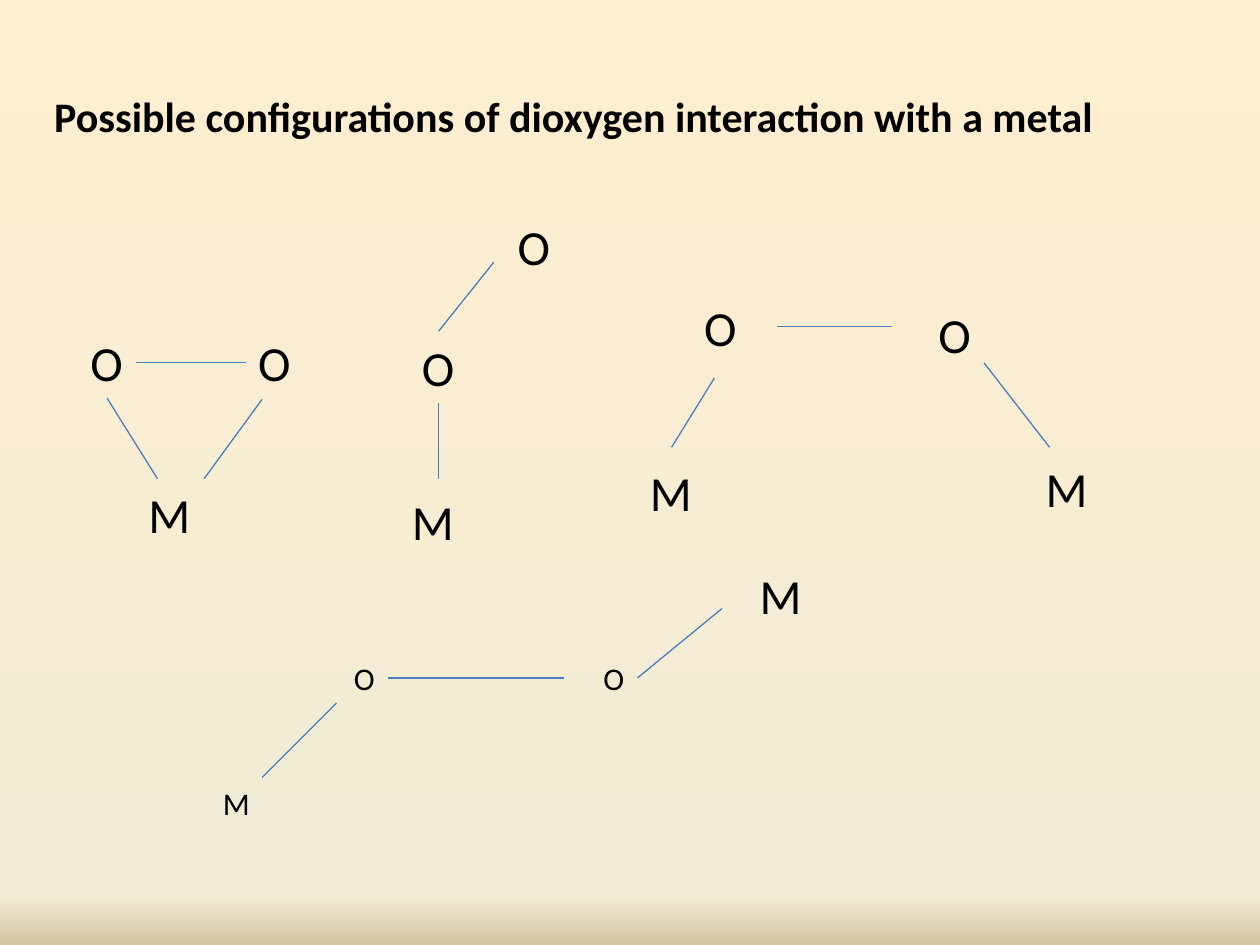
from typing import NamedTuple

from lxml.etree import SubElement
from pptx import Presentation
from pptx.dml.color import RGBColor
from pptx.enum.shapes import MSO_CONNECTOR
from pptx.enum.text import MSO_ANCHOR, MSO_AUTO_SIZE, PP_ALIGN
from pptx.oxml.ns import qn
from pptx.util import Inches, Pt

# Grid of 100 columns by 75 rows
COLS, ROWS = 100, 75
WIDE, HIGH = Inches(10), Inches(7.5)
FONT = "Calibri"
COLORS = {"text": "000000", "bond": "4B7EBC",
          "top": "FFEFD1", "low": "F0EBD5", "base": "D1C39F"}
SIZES = {("M", 28): (5.4, 5.7), ("O", 28): (4.6, 5.7),
         ("M", 18): (4.2, 4), ("O", 18): (3.7, 4)}
LEFT, BOTTOM, RIGHT, TOP = 1, 2, 3, 0


class Atom(NamedTuple):
    name: str
    sign: str
    col: float
    row: float
    size: int = 28


class Spot(NamedTuple):
    col: float
    row: float


class Joint(NamedTuple):
    name: str
    side: int


class Bond(NamedTuple):
    start: Spot | Joint
    end: Spot | Joint


ATOMS = [
    # Ring
    Atom("ring M", "M", 10.8, 38),
    Atom("ring O left", "O", 6.2, 25.9),
    Atom("ring O right", "O", 19.5, 25.9),
    # Bent, end on
    Atom("bent M", "M", 31.7, 38.5),
    Atom("bent O low", "O", 32.5, 26.3),
    Atom("bent O high", "O", 40.1, 16.7),
    # Bridge, both metals below
    Atom("bridge M left", "M", 50.6, 36.2),
    Atom("bridge O left", "O", 54.9, 23.1),
    Atom("bridge O right", "O", 73.5, 23.7),
    Atom("bridge M right", "M", 82, 35.9),
    # Zigzag, metals on both sides
    Atom("zigzag M left", "M", 16.7, 61.7, 18),
    Atom("zigzag O left", "O", 27.1, 51.8, 18),
    Atom("zigzag O right", "O", 46.9, 51.8, 18),
    Atom("zigzag M right", "M", 59.3, 44.4),
]

BONDS = [
    # Ring
    Bond(Spot(16.2, 38), Spot(20.8, 31.7)),
    Bond(Joint("ring O left", RIGHT), Joint("ring O right", LEFT)),
    Bond(Joint("ring O left", BOTTOM), Spot(12.5, 38)),
    # Bent
    Bond(Joint("bent O low", BOTTOM), Spot(34.8, 38)),
    Bond(Joint("bent O low", TOP), Spot(39.2, 20.8)),
    # Bridge
    Bond(Spot(53.3, 35.5), Spot(56.7, 30)),
    Bond(Spot(61.7, 25.9), Spot(70.8, 25.9)),
    Bond(Spot(78.1, 28.8), Spot(83.3, 35.5)),
    # Zigzag
    Bond(Spot(20.8, 61.7), Spot(26.7, 55.8)),
    Bond(Joint("zigzag O left", RIGHT), Spot(44.8, 53.8)),
    Bond(Joint("zigzag O right", RIGHT), Spot(57.3, 48.3)),
]


def across(cols: float) -> int:
    return round(WIDE * cols / COLS)


def down(rows: float) -> int:
    return round(HIGH * rows / ROWS)


def style(frame, size: int, bold: bool = False) -> None:
    for run in frame.paragraphs[0].runs:
        run.font.name = FONT
        run.font.size = Pt(size)
        run.font.bold = bold
        run.font.color.rgb = RGBColor.from_string(COLORS["text"])


def paint_back(slide) -> None:
    fill = slide.background.fill
    fill.gradient()
    fill.gradient_angle = 270  # counted the other way round: top to bottom
    stops = slide.element.find(".//" + qn("a:gsLst"))
    for stop in list(stops):
        stops.remove(stop)
    for share, key in ((0, "top"), (95, "low"), (100, "base")):
        stop = SubElement(stops, qn("a:gs"), pos=str(share * 1000))
        SubElement(stop, qn("a:srgbClr"), val=COLORS[key])


def add_title(slide, text: str) -> None:
    title = slide.shapes.title
    title.left, title.top = across(3.3), down(6.7)
    title.width, title.height = across(92.5), down(5)
    frame = title.text_frame
    frame.text = text
    frame.word_wrap = True
    frame.auto_size = MSO_AUTO_SIZE.SHAPE_TO_FIT_TEXT
    frame.vertical_anchor = MSO_ANCHOR.TOP
    frame.paragraphs[0].alignment = PP_ALIGN.LEFT
    style(frame, 24, True)


def add_atom(slide, atom: Atom):
    wide, high = SIZES[atom.sign, atom.size]
    box = slide.shapes.add_textbox(across(atom.col), down(atom.row),
                                   across(wide), down(high))
    frame = box.text_frame
    frame.text = atom.sign
    frame.word_wrap = False
    frame.auto_size = MSO_AUTO_SIZE.SHAPE_TO_FIT_TEXT
    style(frame, atom.size)
    return box


def add_bond(slide, bond: Bond, boxes: dict) -> None:
    ends = [(across(end.col), down(end.row)) if isinstance(end, Spot) else (0, 0)
            for end in bond]
    line = slide.shapes.add_connector(MSO_CONNECTOR.STRAIGHT, *ends[0], *ends[1])
    for end, join in zip(bond, (line.begin_connect, line.end_connect)):
        if isinstance(end, Joint):
            join(boxes[end.name], end.side)
    line.line.color.rgb = RGBColor.from_string(COLORS["bond"])
    line.line.width = Pt(0.75)
    SubElement(line.element.spPr, qn("a:effectLst"))


def main() -> None:
    deck = Presentation()
    deck.slide_width, deck.slide_height = WIDE, HIGH
    slide = deck.slides.add_slide(deck.slide_layouts.get_by_name("Title Only"))
    paint_back(slide)
    add_title(slide, "Possible configurations of dioxygen interaction with a metal")
    boxes = {atom.name: add_atom(slide, atom) for atom in ATOMS}
    for bond in BONDS:
        add_bond(slide, bond, boxes)
    deck.save("out.pptx")


if __name__ == "__main__":
    main()
